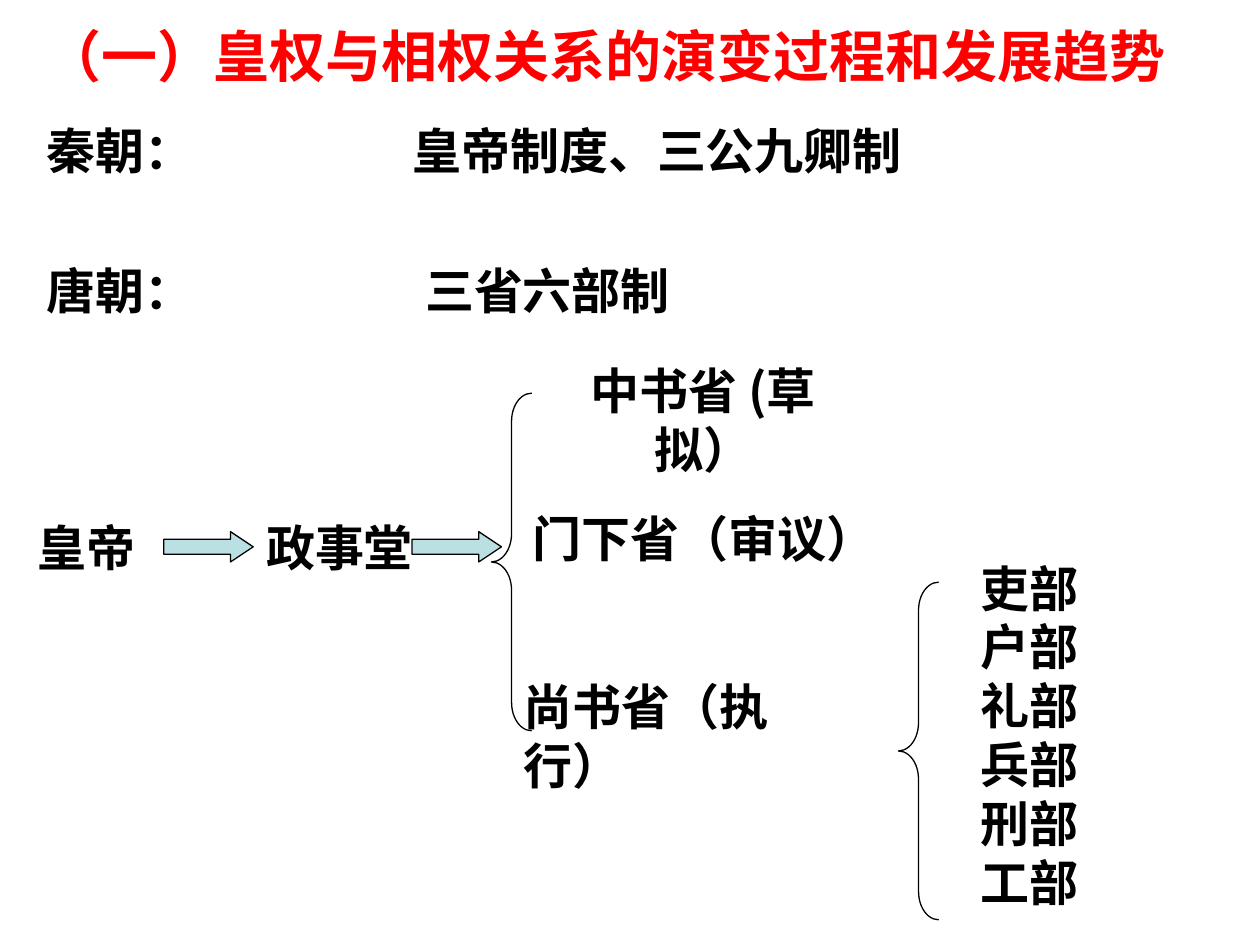
from lxml import etree
from pptx import Presentation
from pptx.dml.color import RGBColor
from pptx.enum.shapes import MSO_SHAPE
from pptx.enum.text import MSO_ANCHOR, MSO_AUTO_SIZE, PP_ALIGN
from pptx.oxml.ns import qn
from pptx.util import Inches, Pt

LEFT, CENTER = PP_ALIGN.LEFT, PP_ALIGN.CENTER
TOP = MSO_ANCHOR.TOP
GROW = MSO_AUTO_SIZE.SHAPE_TO_FIT_TEXT
ARROW, BRACE = MSO_SHAPE.RIGHT_ARROW, MSO_SHAPE.LEFT_BRACE
FONT = "Noto Sans CJK SC"
COLORS = {"title": "FF0000", "text": "000000", "arrow": "BBE0E3", "line": "000000"}

prs = Presentation()
prs.slide_width, prs.slide_height = Inches(10), Inches(7.5)
COL, ROW = prs.slide_width / 100, prs.slide_height / 75
s = prs.slides.add_slide(prs.slide_layouts[5])


def box(col, row, cols, rows):
    """Turn grid columns and rows into left, top, width and height."""
    return [round(n) for n in (col * COL, row * ROW, cols * COL, rows * ROW)]


def write(sp, text, size=28, color="text", align=LEFT, wrap=False):
    tf = sp.text_frame
    tf.text = text
    tf.word_wrap, tf.auto_size, tf.vertical_anchor = wrap, GROW, TOP
    for p in tf.paragraphs:
        p.alignment = align
        for r in p.runs:
            r.font.name, r.font.size, r.font.bold = FONT, Pt(size), True
            r.font.color.rgb = RGBColor.from_string(COLORS[color])
            ea = etree.SubElement(r._r.get_or_add_rPr(), qn("a:ea"))
            ea.set("typeface", FONT)


# Title
title = s.shapes.title
title.left, title.top, title.width, title.height = box(2.6, 1.2, 91.3, 6.4)
write(title, "（一）皇权与相权关系的演变过程和发展趋势", size=32, color="title")

# Dynasties, their systems and the Tang offices
QIN, TANG, COURT = 9.1, 20.2, 40.6
LINE = 5.7
MINISTRIES = ["吏部", "户部", "礼部", "兵部", "刑部", "工部"]
labels = [
    ("秦朝：", (2.7, QIN, 13.7, LINE), {}),
    ("皇帝制度、三公九卿制", (31.1, QIN, 42.1, LINE), {"align": CENTER, "wrap": True}),
    ("唐朝：", (2.7, TANG, 13.7, LINE), {}),
    ("三省六部制", (32.7, TANG, 21.5, LINE), {"align": CENTER}),
    ("皇帝", (2, COURT, 9.8, LINE), {"align": CENTER}),
    ("政事堂", (20.1, COURT, 13.7, LINE), {"align": CENTER}),
    ("中书省 (草拟）", (43.3, 28.1, 25, LINE), {"align": CENTER, "wrap": True}),
    ("门下省（审议）", (41.3, 39.9, 31.5, LINE), {"wrap": True}),
    ("尚书省（执行）", (40.6, 53.2, 28.4, LINE), {"wrap": True}),
    ("\n".join(MINISTRIES), (76.8, 43.8, 9.8, 29), {"align": CENTER}),
]
for text, cell, style in labels:
    write(s.shapes.add_textbox(*box(*cell)), text, **style)

# Arrows along the chain of command, braces around the branches
marks = [(ARROW, col, 42.2, 7.1, 2.4, (0.5, 0.75)) for col in (13, 32.7)]
marks += [(BRACE, col, row, 3.2, 26.8, (0.7, 0.5)) for col, row in ((39, 31.2), (71.3, 46.2))]
for kind, col, row, cols, rows, adjusts in marks:
    sp = s.shapes.add_shape(kind, *box(col, row, cols, rows))
    sp.shadow.inherit = False
    for i, value in enumerate(adjusts):
        sp.adjustments[i] = value
    if kind == ARROW:
        sp.fill.solid()
        sp.fill.fore_color.rgb = RGBColor.from_string(COLORS["arrow"])
    else:
        sp.fill.background()
    sp.line.color.rgb = RGBColor.from_string(COLORS["line"])
    sp.line.width = Pt(0.75)

prs.save("out.pptx")
